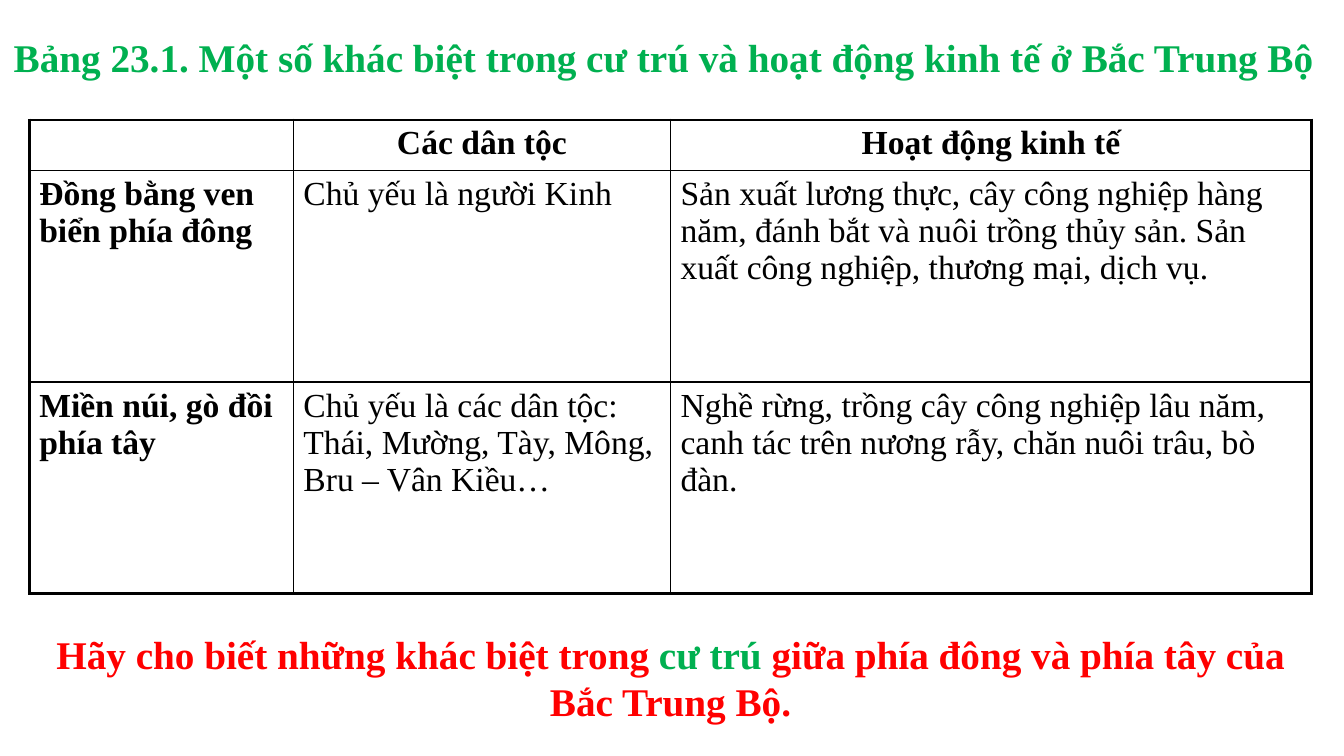
from pptx import Presentation
from pptx.dml.color import RGBColor
from pptx.enum.shapes import MSO_SHAPE
from pptx.enum.text import MSO_ANCHOR, PP_ALIGN
from pptx.oxml.ns import qn
from pptx.util import Inches, Pt
from lxml.etree import SubElement

FONT = "Times New Roman"
BLACK, GREEN, RED, WHITE = "000000", "00B050", "FF0000", "FFFFFF"
COLUMN_WIDTHS = (2.62, 3.74, 6.36)
ROW_HEIGHTS = (0.5, 2.1, 2.1)
ROWS = (
    ("", "Các dân tộc", "Hoạt động kinh tế"),
    ("Đồng bằng ven biển phía đông",
     "Chủ yếu là người Kinh",
     "Sản xuất lương thực, cây công nghiệp hàng năm, đánh bắt và nuôi trồng "
     "thủy sản. Sản xuất công nghiệp, thương mại, dịch vụ."),
    ("Miền núi, gò đồi phía tây",
     "Chủ yếu là các dân tộc: Thái, Mường, Tày, Mông, Bru – Vân Kiều…",
     "Nghề rừng, trồng cây công nghiệp lâu năm, canh tác trên nương rẫy, "
     "chăn nuôi trâu, bò đàn."),
)


def color(hex_code):
    return RGBColor.from_string(hex_code)


def style_paragraph(p, size, bold, align):
    p.alignment = align
    p.font.name = FONT
    p.font.size = Pt(size)
    p.font.bold = bold


def add_runs(p, *runs):
    """Append (text, colour) runs to a paragraph."""
    for text, hex_code in runs:
        r = p.add_run()
        r.text = text
        r.font.color.rgb = color(hex_code)


def set_borders(cell, widths):
    """Draw black borders; widths maps each side tag to points."""
    props = cell._tc.get_or_add_tcPr()
    for i, (side, width) in enumerate(widths.items()):
        line = props.makeelement(qn(f"a:{side}"), {"w": str(Pt(width))})
        fill = SubElement(line, qn("a:solidFill"))
        SubElement(fill, qn("a:srgbClr"), val=BLACK)
        props.insert(i, line)


def add_title(slide, x, y, w, h):
    tf = slide.shapes.add_textbox(Inches(x), Inches(y), Inches(w), Inches(h)).text_frame
    tf.word_wrap = True
    p = tf.paragraphs[0]
    style_paragraph(p, 28, True, PP_ALIGN.CENTER)
    add_runs(p, ("Bảng 23.1. Một số khác biệt trong cư trú và hoạt động kinh tế "
                 "ở Bắc Trung Bộ", GREEN))


def add_comparison_table(slide, x, y):
    table = slide.shapes.add_table(
        len(ROW_HEIGHTS), len(COLUMN_WIDTHS), Inches(x), Inches(y),
        Inches(sum(COLUMN_WIDTHS)), Inches(sum(ROW_HEIGHTS))).table
    table.first_row = table.horz_banding = False
    for column, width in zip(table.columns, COLUMN_WIDTHS):
        column.width = Inches(width)
    for row, height in zip(table.rows, ROW_HEIGHTS):
        row.height = Inches(height)

    last_row, last_col = len(ROW_HEIGHTS) - 1, len(COLUMN_WIDTHS) - 1
    for i, texts in enumerate(ROWS):
        for j, text in enumerate(texts):
            cell = table.cell(i, j)
            cell.fill.background()
            set_borders(cell, {
                "lnL": 2.25 if j == 0 else 1,
                "lnR": 2.25 if j == last_col else 1,
                "lnT": 2.25 if i == 0 else 1,
                "lnB": 2.25 if i == last_row else 1,
            })
            p = cell.text_frame.paragraphs[0]
            style_paragraph(p, 24, i == 0 or j == 0,
                            PP_ALIGN.CENTER if i == 0 else PP_ALIGN.LEFT)
            if text:
                add_runs(p, (text, BLACK))


def add_question(slide, x, y, w, h):
    s = slide.shapes.add_shape(MSO_SHAPE.ROUNDED_RECTANGLE,
                               Inches(x), Inches(y), Inches(w), Inches(h))
    s.shadow.inherit = False
    s.fill.solid()
    s.fill.fore_color.rgb = color(WHITE)
    s.line.fill.background()
    tf = s.text_frame
    tf.word_wrap = True
    tf.vertical_anchor = MSO_ANCHOR.MIDDLE
    p = tf.paragraphs[0]
    style_paragraph(p, 28, True, PP_ALIGN.CENTER)
    add_runs(p, ("Hãy cho biết những khác biệt trong ", RED), ("cư trú ", GREEN),
             ("giữa phía đông và phía tây của Bắc Trung Bộ.", RED))


def main():
    prs = Presentation()
    prs.slide_width, prs.slide_height = Inches(13.33), Inches(7.5)
    slide = prs.slides.add_slide(prs.slide_layouts[6])
    add_comparison_table(slide, 0.29, 1.19)
    add_title(slide, 0, 0.28, 13.16, 0.57)
    add_question(slide, 0.29, 6.22, 12.72, 1)
    prs.save("out.pptx")


if __name__ == "__main__":
    main()
